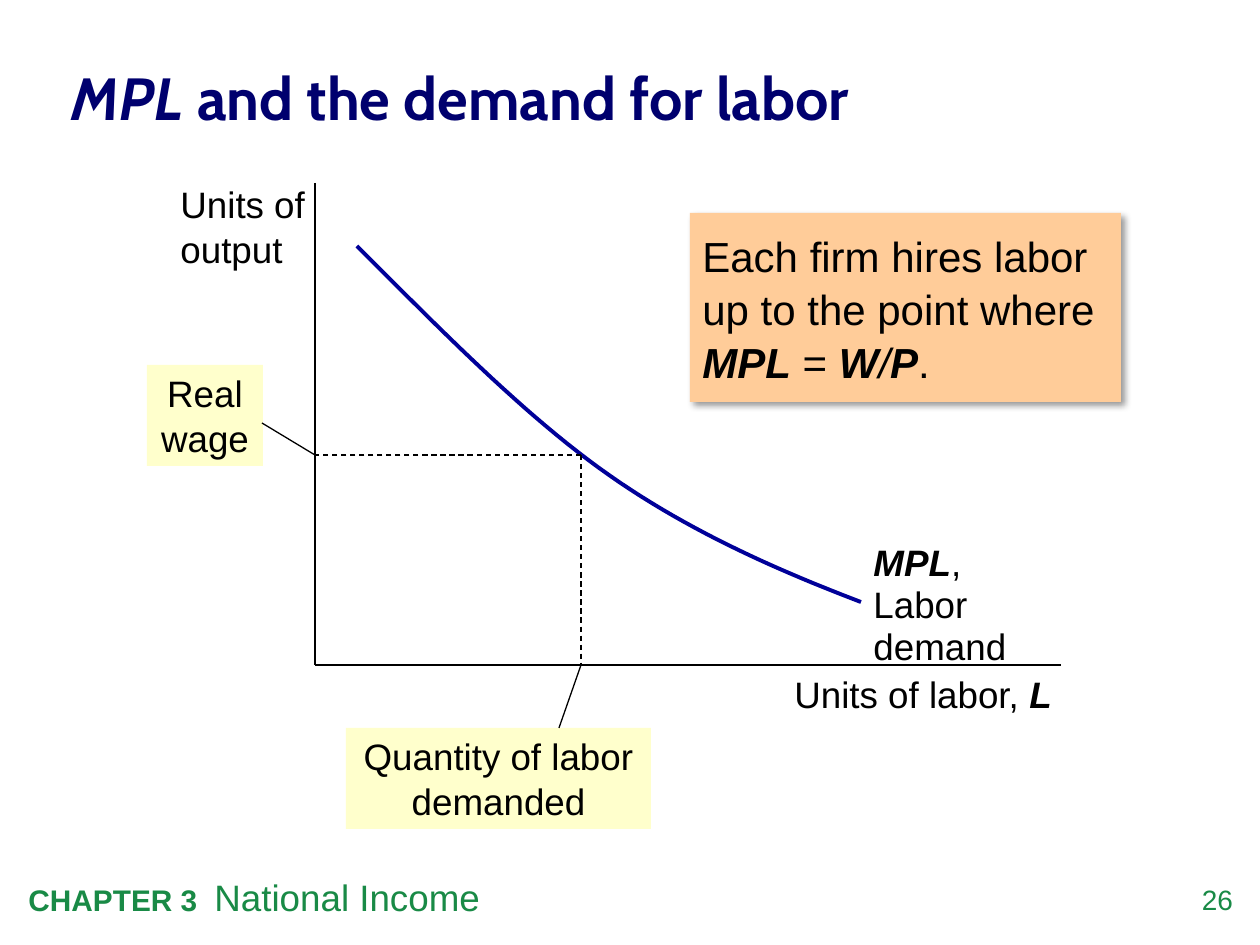
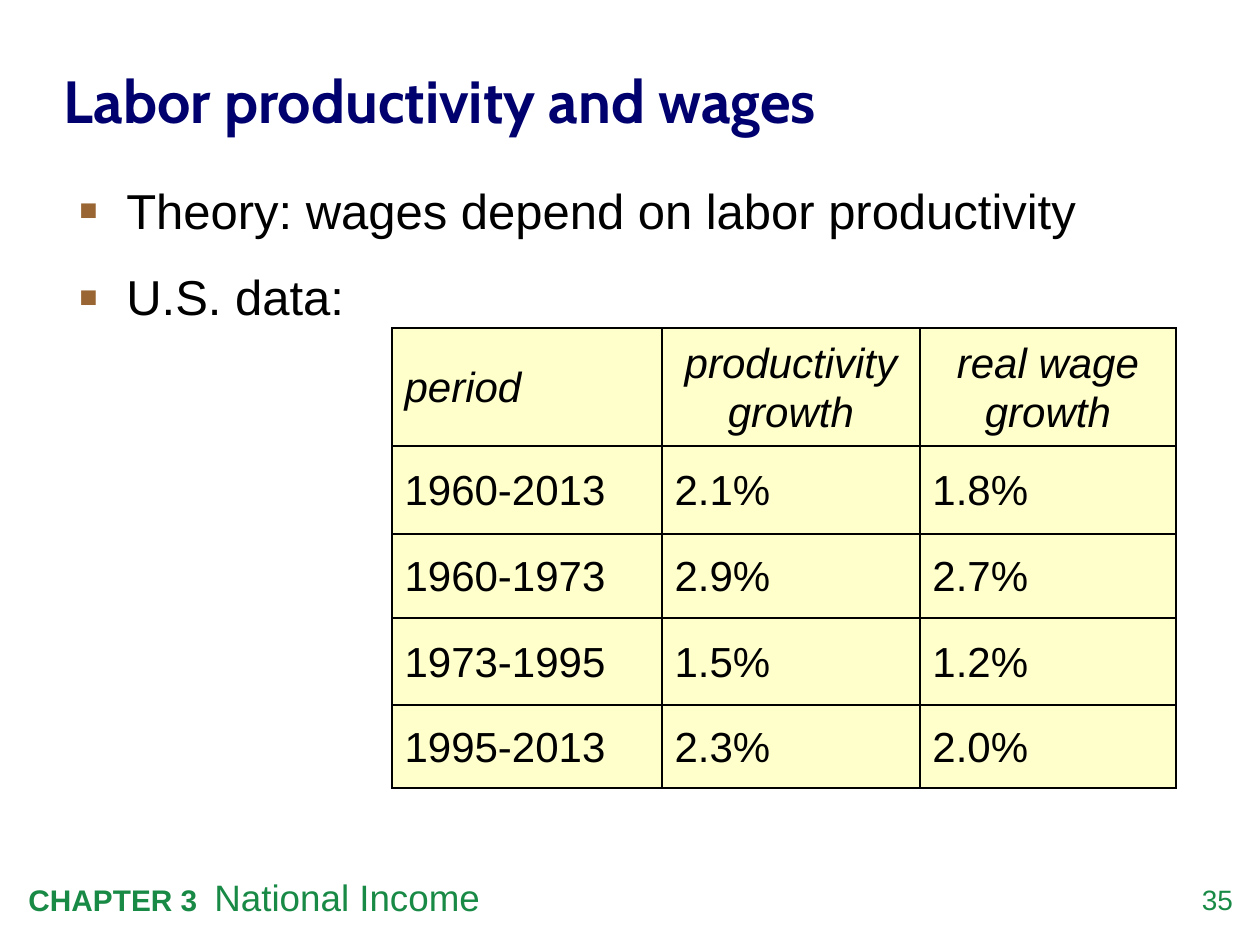
from lxml.etree import SubElement as Sub
from pptx import Presentation
from pptx.dml.color import RGBColor as Rgb
from pptx.enum.dml import MSO_LINE as Dash
from pptx.enum.shapes import MSO_CONNECTOR as Conn, MSO_SHAPE as Shape
from pptx.enum.text import MSO_ANCHOR as Anchor, MSO_AUTO_SIZE as Auto, PP_ALIGN as Align
from pptx.oxml.ns import qn
from pptx.util import Emu, Pt

HUES = {"navy": "00006E", "curve": "000099", "green": "198A46", "ink": "000000",
        "peach": "FFCC99", "cream": "FFFFCC", "brown": "996633"}
SCALE = 914400 / 126

FOOT = [("CHAPTER 3\t", "b", 17), ("National Income", "", 21)]
FOOTBOX, PAGEBOX, FOOTTAB = (16, 869, 1031, 57), (1164, 883, 69, 40), 186

ORIGIN, POINT = (315, 665), (581, 455)
AXES = [((315, 183), ORIGIN), (ORIGIN, (1061, 665))]
GUIDES = [(POINT, (ORIGIN[0], POINT[1])), (POINT, (POINT[0], ORIGIN[1]))]
LEADS = [((315, 455), (262, 423)), ((581, 665), (559, 728))]
CURVE = [((357, 246), (441, 330), (525, 416), (609, 475)),
         ((609, 475), (693, 534), (785, 573), (861, 602))]
STEPS = 24
RULE = [("Each firm hires labor \nup to the point where ", ""), ("MPL", "bi"), (" = ", ""),
        ("W", "bi"), ("/", "i"), ("P", "bi"), (".", "")]
RULEBOX = (690, 213, 431, 189)
LABELS = [((168, 176, 168, 101), [("Units of output", "")], 1),
          ((782, 669, 294, 54), [("Units of labor, ", ""), ("L", "bi")], 0.95),
          ((861, 537, 210, 139), [("MPL", "bi"), (", Labor demand", "")], 0.95)]
NOTES = [((147, 365, 116, 101), "Real wage"),
         ((346, 728, 305, 101), "Quantity of labor demanded")]

POINTS = ["Theory: wages depend on labor productivity", "U.S. data:"]
BODYBOX, INDENT = (66, 171, 1131, 673), 48
GRID = [("period", "productivity growth", "real wage growth"),
        ("1960-2013", "2.1%", "1.8%"),
        ("1960-1973", "2.9%", "2.7%"),
        ("1973-1995", "1.5%", "1.2%"),
        ("1995-2013", "2.3%", "2.0%")]
COLS, ROWS, CORNER = (270, 258, 256), (118, 88, 84, 87, 83), (392, 328)


def px(*vals):
    """Turn pixel lengths into EMU."""
    return [Emu(round(v * SCALE)) for v in vals]


def hue(name):
    """Look up a colour by name."""
    return Rgb.from_string(HUES[name])


def write(frame, paras, size=21, font="Arial", color="ink", align=Align.LEFT,
          space=1, before=0, anchor=Anchor.TOP, inset=True):
    """Fill a text frame with paragraphs of (text, style, size) runs."""
    frame.word_wrap = True
    frame.auto_size = Auto.NONE
    frame.vertical_anchor = anchor
    if not inset:
        frame.margin_left = frame.margin_right = frame.margin_top = frame.margin_bottom = 0
    for num, runs in enumerate(paras):
        par = frame.add_paragraph() if num else frame.paragraphs[0]
        par.alignment, par.line_spacing = align, space
        par.space_before = Pt(before if num else 0)
        for text, style, *own in runs:
            for row, part in enumerate(text.split("\n")):
                if row:
                    par.add_line_break()
                run = par.add_run()
                run.text = part
                face = run.font
                face.name, face.size = font, Pt(own[0] if own else size)
                face.bold, face.italic = "b" in style, "i" in style
                face.color.rgb = hue(color)


def label(slide, box, paras, **form):
    """Add a text box and return its frame."""
    frame = slide.shapes.add_textbox(*px(*box)).text_frame
    write(frame, paras, **form)
    return frame


def panel(slide, box, fill, runs, **form):
    """Add a filled rectangle with text."""
    rect = slide.shapes.add_shape(Shape.RECTANGLE, *px(*box))
    rect.shadow.inherit = False
    rect.fill.solid()
    rect.fill.fore_color.rgb = hue(fill)
    rect.line.fill.background()
    write(rect.text_frame, [runs], **form)
    return rect


def shade(shape):
    """Give a shape a soft shadow to the lower right."""
    fx = shape._element.spPr.find(qn("a:effectLst"))
    cast = Sub(fx, qn("a:outerShdw"), blurRad=str(Pt(4)), dist=str(Pt(3)),
               dir="2700000", algn="tl", rotWithShape="0")
    tint = Sub(cast, qn("a:srgbClr"), val=HUES["ink"])
    Sub(tint, qn("a:alpha"), val="40000")


def stroke(slide, start, end, dash=None):
    """Draw a thin straight line."""
    link = slide.shapes.add_connector(Conn.STRAIGHT, *px(*start, *end))
    link.line.color.rgb = hue("ink")
    link.line.width = Pt(0.75)
    if dash:
        link.line.dash_style = dash
    Sub(link._element.spPr, qn("a:effectLst"))


def bezier(knots, t):
    """Find the point at t on a cubic curve."""
    mix = ((1 - t) ** 3, 3 * t * (1 - t) ** 2, 3 * t * t * (1 - t), t ** 3)
    return tuple(sum(m * k[axis] for m, k in zip(mix, knots)) for axis in (0, 1))


def plot(slide):
    """Draw the labor demand curve."""
    dots = [px(*bezier(arc, n / STEPS)) for arc in CURVE for n in range(STEPS + 1)]
    pen = slide.shapes.build_freeform(*dots[0])
    pen.add_line_segments(dots[1:], close=False)
    path = pen.convert_to_shape()
    path.shadow.inherit = False
    path.fill.background()
    path.line.color.rgb = hue("curve")
    path.line.width = Pt(2.25)


def start(deck, box, runs, page):
    """Add a slide with its title, footer and page number."""
    slide = deck.slides.add_slide(deck.slide_layouts[5])
    head = slide.shapes.title
    head.left, head.top, head.width, head.height = px(*box)
    write(head.text_frame, [runs], size=34, font="Cabin", color="navy", space=1.05,
          anchor=Anchor.MIDDLE, inset=False)
    label(slide, PAGEBOX, [[(page, "")]], size=16, color="green",
          align=Align.RIGHT, inset=False)
    foot = label(slide, FOOTBOX, [FOOT], color="green")
    tabs = Sub(foot.paragraphs[0]._p.get_or_add_pPr(), qn("a:tabLst"))
    Sub(tabs, qn("a:tab"), pos=str(px(FOOTTAB)[0]), algn="l")
    return slide


def graph(deck):
    """Build the labor demand slide."""
    slide = start(deck, (72, 33, 1101, 123),
                  [("MPL", "bi"), (" and the demand for labor", "b")], "26")
    shade(panel(slide, RULEBOX, "peach", RULE, size=24, space=1.05, anchor=Anchor.MIDDLE))
    for ends in AXES:
        stroke(slide, *ends)
    for box, runs, space in LABELS:
        label(slide, box, [runs], space=space)
    plot(slide)
    for ends in GUIDES:
        stroke(slide, *ends, dash=Dash.DASH)
    for box, text in NOTES:
        panel(slide, box, "cream", [(text, "")], align=Align.CENTER)
    for ends in LEADS:
        stroke(slide, *ends)


def bullet(par):
    """Give a paragraph a square bullet."""
    props = par._p.get_or_add_pPr()
    left = px(INDENT)[0]
    props.set("marL", str(left))
    props.set("indent", str(-left))
    Sub(Sub(props, qn("a:buClr")), qn("a:srgbClr"), val=HUES["brown"])
    Sub(props, qn("a:buSzPct"), val="120000")
    Sub(props, qn("a:buFont"), typeface="Arial")
    Sub(props, qn("a:buChar"), char="▪")


def border(cell):
    """Rule all four sides of a cell."""
    props = cell._tc.get_or_add_tcPr()
    for side in "LRTB":
        edge = Sub(props, qn("a:ln" + side), w=str(Pt(1)))
        Sub(Sub(edge, qn("a:solidFill")), qn("a:srgbClr"), val=HUES["ink"])


def table(slide):
    """Add the growth table."""
    grid = slide.shapes.add_table(len(ROWS), len(COLS),
                                  *px(*CORNER, sum(COLS), sum(ROWS))).table
    grid.first_row = grid.horz_banding = False
    for col, width in zip(grid.columns, px(*COLS)):
        col.width = width
    for row, high in zip(grid.rows, px(*ROWS)):
        row.height = high
    for r, row in enumerate(GRID):
        for c, text in enumerate(row):
            cell = grid.cell(r, c)
            border(cell)
            cell.fill.solid()
            cell.fill.fore_color.rgb = hue("cream")
            write(cell.text_frame, [[(text, "" if r else "i")]], size=24, space=1.05,
                  align=Align.LEFT if r * c or not c else Align.CENTER)
            cell.vertical_anchor = Anchor.MIDDLE


def wages(deck):
    """Build the productivity and wages slide."""
    slide = start(deck, (64, 33, 1137, 130), [("Labor productivity and wages", "b")], "35")
    body = label(slide, BODYBOX, [[(text, "")] for text in POINTS],
                 size=28, space=1.05, before=14)
    for par in body.paragraphs:
        bullet(par)
    table(slide)


def main():
    """Build and save the deck."""
    deck = Presentation()
    deck.slide_width, deck.slide_height = px(1260, 945)
    graph(deck)
    wages(deck)
    deck.save("out.pptx")


if __name__ == "__main__":
    main()
